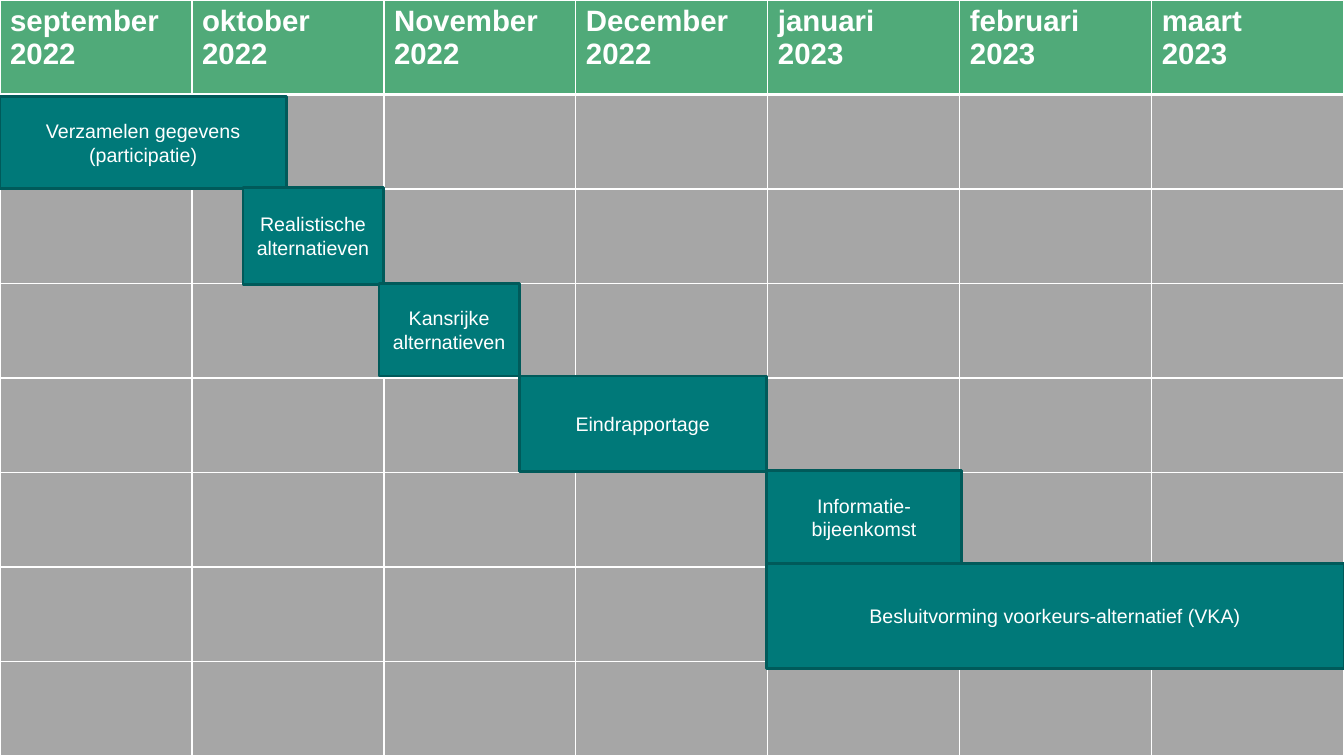
from dataclasses import dataclass

import lxml.etree
import pptx
import pptx.dml.color
import pptx.enum.shapes
import pptx.enum.text
import pptx.oxml.ns
import pptx.presentation
import pptx.shapes.autoshape
import pptx.slide
import pptx.table
import pptx.text.text
import pptx.util

WHITE = pptx.dml.color.RGBColor(0xFF, 0xFF, 0xFF)
HEADER_GREEN = pptx.dml.color.RGBColor(0x50, 0xAA, 0x79)
GRID_GREY = pptx.dml.color.RGBColor(0xA6, 0xA6, 0xA6)
PHASE_TEAL = pptx.dml.color.RGBColor(0x00, 0x79, 0x79)
PHASE_EDGE = pptx.dml.color.RGBColor(0x00, 0x5A, 0x5A)

SLIDE_WIDTH = 13.33
SLIDE_HEIGHT = 7.5
ROW_COUNT = 8


@dataclass(frozen=True)
class Month:
    name: str
    year: int


@dataclass(frozen=True)
class Phase:
    title: str
    left: float
    top: float
    width: float
    height: float


MONTHS = [
    Month("september", 2022),
    Month("oktober", 2022),
    Month("November", 2022),
    Month("December", 2022),
    Month("januari", 2023),
    Month("februari", 2023),
    Month("maart", 2023),
]

PHASES = [
    Phase("Verzamelen gegevens (participatie)", 0, 0.96, 2.84, 0.91),
    Phase("Realistische alternatieven", 2.41, 1.86, 1.39, 0.96),
    Phase("Kansrijke alternatieven", 3.76, 2.81, 1.39, 0.92),
    Phase("Eindrapportage", 5.15, 3.73, 2.45, 0.95),
    Phase("Informatie-bijeenkomst", 7.6, 4.67, 1.94, 0.92),
    Phase("Besluitvorming voorkeurs-alternatief (VKA)", 7.6, 5.59, 5.73, 1.04),
]


def write_text(
    frame: pptx.text.text.TextFrame,
    text: str,
    *,
    size: float,
    bold: bool = False,
    align: pptx.enum.text.PP_ALIGN = pptx.enum.text.PP_ALIGN.LEFT,
) -> None:
    frame.text = text
    frame.word_wrap = True
    for paragraph in frame.paragraphs:
        paragraph.alignment = align
        for run in paragraph.runs:
            run.font.name = "Arial"
            run.font.size = pptx.util.Pt(size)
            run.font.bold = bold
            run.font.color.rgb = WHITE


def set_borders(cell: pptx.table._Cell, top: float, bottom: float) -> None:
    properties = cell._tc.get_or_add_tcPr()
    widths = {"a:lnL": 1, "a:lnR": 1, "a:lnT": top, "a:lnB": bottom}
    for position, (tag, width) in enumerate(widths.items()):
        border = lxml.etree.Element(
            pptx.oxml.ns.qn(tag), w=str(int(pptx.util.Pt(width)))
        )
        fill = lxml.etree.SubElement(border, pptx.oxml.ns.qn("a:solidFill"))
        lxml.etree.SubElement(fill, pptx.oxml.ns.qn("a:srgbClr"), val=str(WHITE))
        properties.insert(position, border)


def draw_calendar(slide: pptx.slide.Slide) -> None:
    calendar = slide.shapes.add_table(
        ROW_COUNT,
        len(MONTHS),
        0,
        0,
        pptx.util.Inches(SLIDE_WIDTH),
        pptx.util.Inches(SLIDE_HEIGHT),
    ).table
    calendar.horz_banding = False
    for row in range(ROW_COUNT):
        for column, month in enumerate(MONTHS):
            cell = calendar.cell(row, column)
            is_header = row == 0
            cell.fill.solid()
            cell.fill.fore_color.rgb = HEADER_GREEN if is_header else GRID_GREY
            set_borders(cell, 3 if row == 1 else 1, 3 if is_header else 1)
            if is_header:
                write_text(
                    cell.text_frame, f"{month.name}\n{month.year}", size=21, bold=True
                )


def draw_phase(slide: pptx.slide.Slide, phase: Phase) -> None:
    bar = slide.shapes.add_shape(
        pptx.enum.shapes.MSO_SHAPE.RECTANGLE,
        pptx.util.Inches(phase.left),
        pptx.util.Inches(phase.top),
        pptx.util.Inches(phase.width),
        pptx.util.Inches(phase.height),
    )
    bar.shadow.inherit = False
    bar.fill.solid()
    bar.fill.fore_color.rgb = PHASE_TEAL
    bar.line.color.rgb = PHASE_EDGE
    bar.line.width = pptx.util.Pt(2)
    bar.text_frame.vertical_anchor = pptx.enum.text.MSO_ANCHOR.MIDDLE
    write_text(
        bar.text_frame, phase.title, size=14, align=pptx.enum.text.PP_ALIGN.CENTER
    )


def main() -> None:
    presentation = pptx.Presentation()
    presentation.slide_width = pptx.util.Inches(SLIDE_WIDTH)
    presentation.slide_height = pptx.util.Inches(SLIDE_HEIGHT)
    planning = presentation.slides.add_slide(presentation.slide_layouts[6])
    draw_calendar(planning)
    for phase in PHASES:
        draw_phase(planning, phase)
    presentation.save("out.pptx")


if __name__ == "__main__":
    main()
